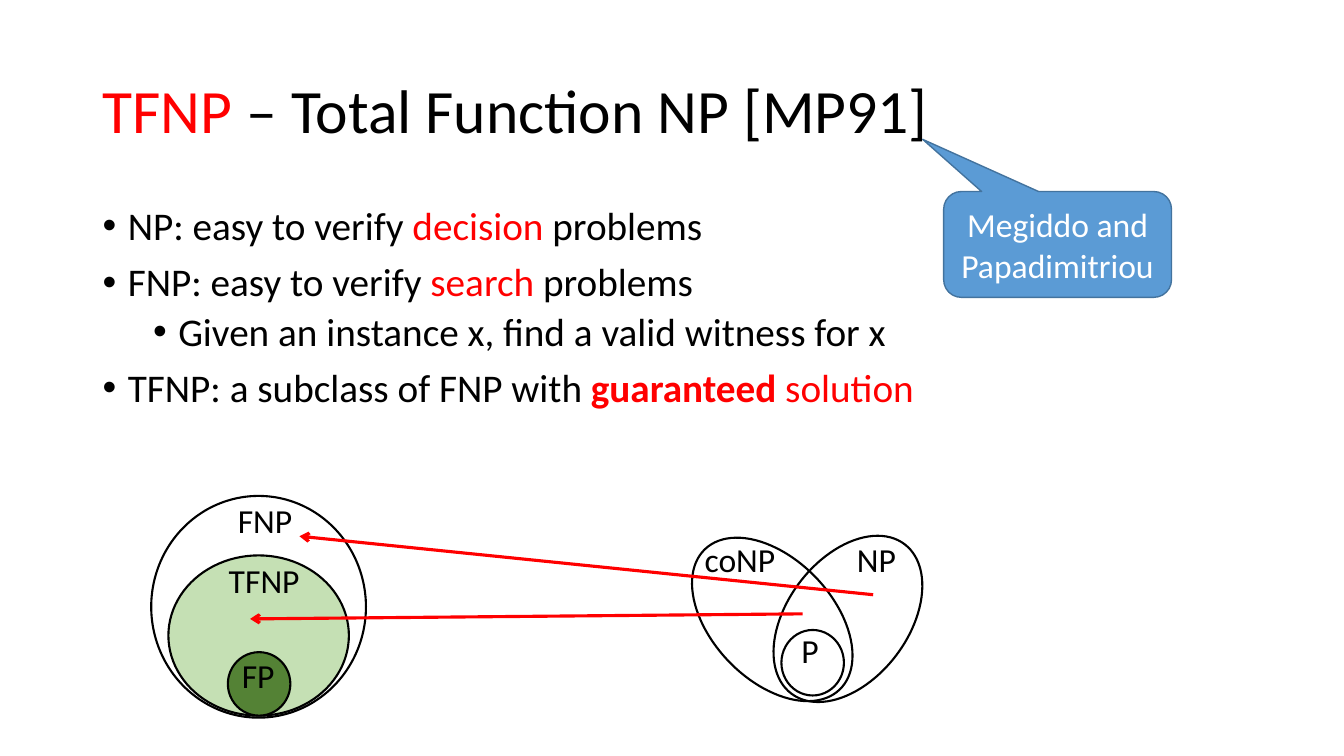
from dataclasses import dataclass

from lxml.etree import SubElement
from pptx import Presentation
from pptx.dml.color import RGBColor
from pptx.enum.shapes import MSO_CONNECTOR, MSO_SHAPE
from pptx.enum.text import MSO_ANCHOR, MSO_AUTO_SIZE, PP_ALIGN
from pptx.oxml.ns import qn
from pptx.shapes.autoshape import Shape
from pptx.slide import Slide
from pptx.text.text import _Paragraph
from pptx.util import Inches, Pt


@dataclass(frozen=True)
class Theme:
    font: str = "Calibri"
    ink: str = "000000"
    accent: str = "FF0000"
    light_green: str = "C5E0B4"
    dark_green: str = "548235"
    note_fill: str = "5B9BD5"
    note_line: str = "43739E"
    note_text: str = "FFFFFF"
    title_size: int = 44
    body_size: int = 28
    label_size: int = 24


THEME = Theme()


@dataclass(frozen=True)
class Phrase:
    text: str
    color: str = THEME.ink
    bold: bool = False


@dataclass(frozen=True)
class Bullet:
    phrases: tuple[Phrase, ...]
    indent: float = 0.25
    space_before: int = 10


@dataclass(frozen=True)
class ClassRegion:
    left: float
    top: float
    width: float
    height: float
    fill: str | None = None
    rotation: float = 0


@dataclass(frozen=True)
class ClassLabel:
    text: str
    left: float
    top: float
    width: float


@dataclass(frozen=True)
class Mapping:
    start: tuple[float, float]
    end: tuple[float, float]


TITLE = (Phrase("TFNP", THEME.accent), Phrase(" – Total Function NP [MP91]"))

BULLETS = (
    Bullet((Phrase("NP: easy to verify "), Phrase("decision", THEME.accent), Phrase(" problems"))),
    Bullet((Phrase("FNP: easy to verify "), Phrase("search ", THEME.accent), Phrase("problems"))),
    Bullet((Phrase("Given an instance x, find a valid witness for x"),), 0.75, 5),
    Bullet((
        Phrase("TFNP: a subclass of FNP with "),
        Phrase("guaranteed", THEME.accent, True),
        Phrase(" solution", THEME.accent),
    )),
)

REGIONS = (
    ClassRegion(1.5, 4.92, 2.13, 2.2),
    ClassRegion(1.67, 5.51, 1.79, 1.59, THEME.light_green),
    ClassRegion(2.26, 6.47, 0.62, 0.63, THEME.dark_green),
    ClassRegion(7.81, 5.21, 1.2, 1.86, rotation=37.2),
    ClassRegion(7.75, 6.25, 0.62, 0.65),
    ClassRegion(7.06, 5.18, 1.2, 1.93, rotation=316.2),
)

LABELS = (
    ClassLabel("FNP", 2.26, 4.91, 0.75),
    ClassLabel("TFNP", 2.17, 5.51, 0.91),
    ClassLabel("FP", 2.3, 6.45, 0.53),
    ClassLabel("coNP", 6.89, 5.3, 0.91),
    ClassLabel("NP", 8.4, 5.3, 0.59),
    ClassLabel("P", 7.85, 6.2, 0.38),
)

MAPPINGS = (
    Mapping((7.96, 6.09), (2.48, 6.14)),
    Mapping((8.66, 5.9), (2.97, 5.32)),
)


def write_phrases(paragraph: _Paragraph, phrases: tuple[Phrase, ...], size: int) -> None:
    for phrase in phrases:
        run = paragraph.add_run()
        run.text = phrase.text
        run.font.name = THEME.font
        run.font.size = Pt(size)
        run.font.bold = phrase.bold
        run.font.color.rgb = RGBColor.from_string(phrase.color)


def style_shape(shape: Shape, fill: str | None, line: str, line_width: float) -> None:
    shape.shadow.inherit = False
    if fill:
        shape.fill.solid()
        shape.fill.fore_color.rgb = RGBColor.from_string(fill)
    else:
        shape.fill.background()
    shape.line.color.rgb = RGBColor.from_string(line)
    shape.line.width = Pt(line_width)


def add_title(slide: Slide) -> None:
    title = slide.shapes.add_textbox(Inches(0.92), Inches(0.4), Inches(11.5), Inches(1.45))
    title.text_frame.word_wrap = True
    title.text_frame.vertical_anchor = MSO_ANCHOR.MIDDLE
    heading = title.text_frame.paragraphs[0]
    heading.line_spacing = 0.9
    write_phrases(heading, TITLE, THEME.title_size)


def add_bullets(slide: Slide) -> None:
    body = slide.shapes.add_textbox(Inches(0.92), Inches(2), Inches(11.5), Inches(4.76))
    frame = body.text_frame
    frame.word_wrap = True
    for index, bullet in enumerate(BULLETS):
        paragraph = frame.add_paragraph() if index else frame.paragraphs[0]
        paragraph.line_spacing = 0.9
        paragraph.space_before = Pt(bullet.space_before)
        properties = paragraph._p.get_or_add_pPr()
        properties.set("marL", str(Inches(bullet.indent)))
        properties.set("indent", str(Inches(-0.25)))
        SubElement(properties, qn("a:buFont"), typeface="Arial")
        SubElement(properties, qn("a:buChar"), char="•")
        write_phrases(paragraph, bullet.phrases, THEME.body_size)


def add_region(slide: Slide, region: ClassRegion) -> None:
    ellipse = slide.shapes.add_shape(
        MSO_SHAPE.OVAL,
        Inches(region.left), Inches(region.top), Inches(region.width), Inches(region.height),
    )
    ellipse.rotation = region.rotation
    style_shape(ellipse, region.fill, THEME.ink, 1.5)


def add_label(slide: Slide, label: ClassLabel) -> None:
    caption = slide.shapes.add_textbox(
        Inches(label.left), Inches(label.top), Inches(label.width), Inches(0.5)
    )
    caption.text_frame.word_wrap = False
    caption.text_frame.auto_size = MSO_AUTO_SIZE.SHAPE_TO_FIT_TEXT
    write_phrases(caption.text_frame.paragraphs[0], (Phrase(label.text),), THEME.label_size)


def add_mapping(slide: Slide, mapping: Mapping) -> None:
    arrow = slide.shapes.add_connector(
        MSO_CONNECTOR.STRAIGHT, *map(Inches, mapping.start), *map(Inches, mapping.end)
    )
    arrow.line.color.rgb = RGBColor.from_string(THEME.accent)
    arrow.line.width = Pt(2.25)
    SubElement(arrow.line._get_or_add_ln(), qn("a:tailEnd"), type="arrow")
    SubElement(arrow._element.spPr, qn("a:effectLst"))


def add_authors_note(slide: Slide) -> None:
    note = slide.shapes.add_shape(
        MSO_SHAPE.ROUNDED_RECTANGULAR_CALLOUT,
        Inches(9.36), Inches(1.9), Inches(2.26), Inches(1.05),
    )
    for index, adjustment in enumerate((-0.592, -0.993, 0.167)):
        note.adjustments[index] = adjustment
    style_shape(note, THEME.note_fill, THEME.note_line, 1)
    note.text_frame.word_wrap = True
    note.text_frame.vertical_anchor = MSO_ANCHOR.MIDDLE
    authors = note.text_frame.paragraphs[0]
    authors.alignment = PP_ALIGN.CENTER
    write_phrases(authors, (Phrase("Megiddo and Papadimitriou", THEME.note_text),), THEME.label_size)


def main() -> None:
    presentation = Presentation()
    presentation.slide_width = Inches(13.33)
    presentation.slide_height = Inches(7.5)
    slide = presentation.slides.add_slide(presentation.slide_layouts[6])
    add_title(slide)
    add_bullets(slide)
    for region in REGIONS:
        add_region(slide, region)
    for label in LABELS:
        add_label(slide, label)
    for mapping in MAPPINGS:
        add_mapping(slide, mapping)
    add_authors_note(slide)
    presentation.save("out.pptx")


if __name__ == "__main__":
    main()
